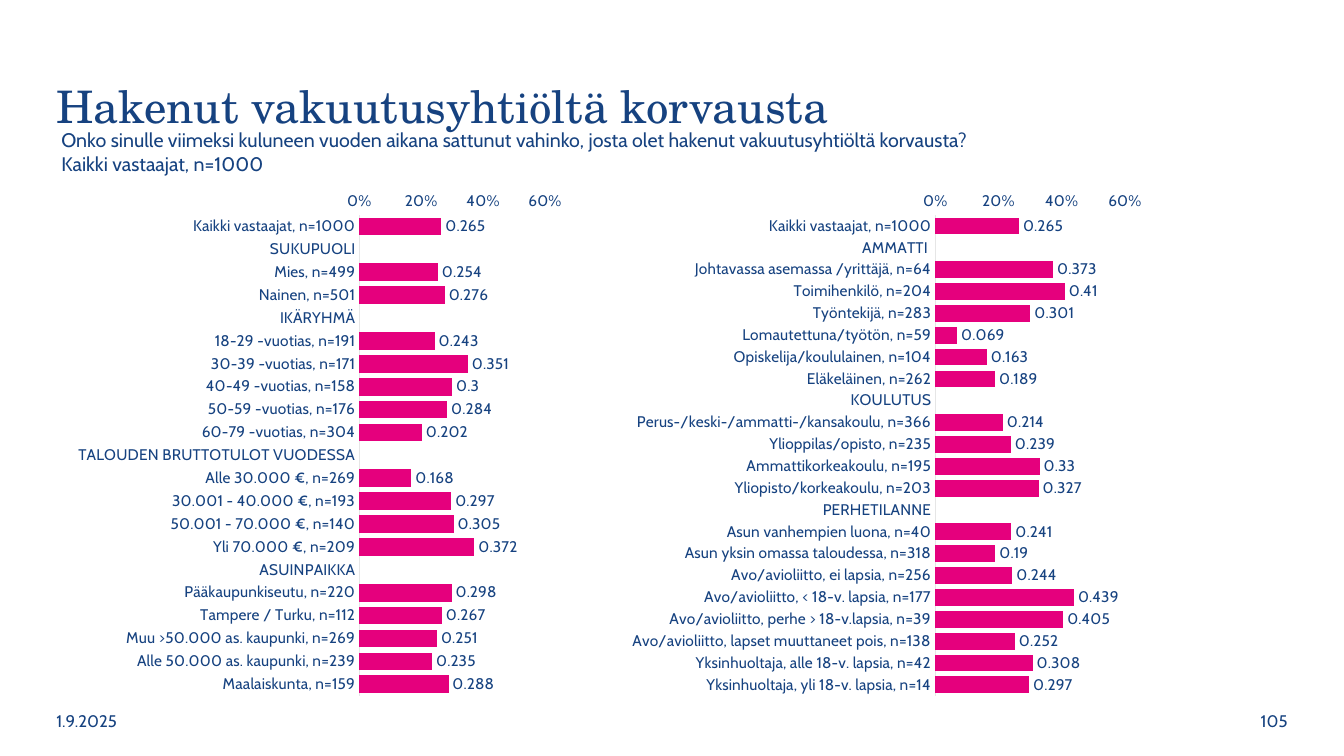
"""Builds a slide with two bar charts of insurance claims by group."""
from lxml import etree
from pptx import Presentation
from pptx.chart.data import CategoryChartData
from pptx.dml.color import RGBColor
from pptx.enum import chart as ch, text as tx
from pptx.oxml.ns import qn
from pptx.util import Inches, Pt

NAVY, PINK, GREY = "164280", "E5007D", "E6E6E6"
TITLE = "Hakenut vakuutusyhtiöltä korvausta"
INTRO = [
    "Onko sinulle viimeksi kuluneen vuoden aikana sattunut vahinko, "
    "josta olet hakenut vakuutusyhtiöltä korvausta?",
    "Kaikki vastaajat, n=1000",
]
LEFT = [
    ("Kaikki vastaajat, n=1000", 0.265),
    ("SUKUPUOLI", None),
    ("Mies, n=499", 0.254),
    ("Nainen, n=501", 0.276),
    ("IKÄRYHMÄ", None),
    ("18-29 -vuotias, n=191", 0.243),
    ("30-39 -vuotias, n=171", 0.351),
    ("40-49 -vuotias, n=158", 0.3),
    ("50-59 -vuotias, n=176", 0.284),
    ("60-79 -vuotias, n=304", 0.202),
    ("TALOUDEN BRUTTOTULOT VUODESSA", None),
    ("Alle 30.000 €, n=269", 0.168),
    ("30.001 - 40.000 €, n=193", 0.297),
    ("50.001 - 70.000 €, n=140", 0.305),
    ("Yli 70.000 €, n=209", 0.372),
    ("ASUINPAIKKA", None),
    ("Pääkaupunkiseutu, n=220", 0.298),
    ("Tampere / Turku, n=112", 0.267),
    ("Muu >50.000 as. kaupunki, n=269", 0.251),
    ("Alle 50.000 as. kaupunki, n=239", 0.235),
    ("Maalaiskunta, n=159", 0.288),
]
RIGHT = [
    ("Kaikki vastaajat, n=1000", 0.265),
    ("AMMATTI ", None),
    ("Johtavassa asemassa /yrittäjä, n=64", 0.373),
    ("Toimihenkilö, n=204", 0.41),
    ("Työntekijä, n=283", 0.301),
    ("Lomautettuna/työtön, n=59", 0.069),
    ("Opiskelija/koululainen, n=104", 0.163),
    ("Eläkeläinen, n=262", 0.189),
    ("KOULUTUS", None),
    ("Perus-/keski-/ammatti-/kansakoulu, n=366", 0.214),
    ("Ylioppilas/opisto, n=235", 0.239),
    ("Ammattikorkeakoulu, n=195", 0.33),
    ("Yliopisto/korkeakoulu, n=203", 0.327),
    ("PERHETILANNE", None),
    ("Asun vanhempien luona, n=40", 0.241),
    ("Asun yksin omassa taloudessa, n=318", 0.19),
    ("Avo/avioliitto, ei lapsia, n=256", 0.244),
    ("Avo/avioliitto, < 18-v. lapsia, n=177", 0.439),
    ("Avo/avioliitto, perhe > 18-v.lapsia, n=39", 0.405),
    ("Avo/avioliitto, lapset muuttaneet pois, n=138", 0.252),
    ("Yksinhuoltaja, alle 18-v. lapsia, n=42", 0.308),
    ("Yksinhuoltaja, yli 18-v. lapsia, n=14", 0.297),
]
CHARTS = [(0.69, 0.439, 0.281, LEFT), (6.14, 0.479, 0.287, RIGHT)]
MID, TOP = tx.MSO_ANCHOR.MIDDLE, tx.MSO_ANCHOR.TOP
START, END = tx.PP_ALIGN.LEFT, tx.PP_ALIGN.RIGHT
NOTES = [
    ((11.69, 6.95, 1.18, 0.4), ["105"], 12, MID, END),
    ((0.46, 6.95, 1.18, 0.4), ["1.9.2025"], 12, MID, START),
    ((0.51, 1.22, 12.13, 0.57), INTRO, 14, TOP, START),
]


def put(item, **vals):
    for key, val in vals.items():
        setattr(item, key, val)


def color(code):
    return RGBColor.from_string(code)


def style(font, size, name="Cabin"):
    put(font, size=Pt(size), name=name, bold=False)
    font.color.rgb = color(NAVY)


def write(shape, box, lines, size, anchor, align, name="Cabin", gap=1.0):
    for key, val in zip(("left", "top", "width", "height"), box):
        setattr(shape, key, Inches(val))
    frame = shape.text_frame
    put(frame, text="\n".join(lines), word_wrap=True,
        auto_size=tx.MSO_AUTO_SIZE.NONE, vertical_anchor=anchor)
    for para in frame.paragraphs:
        put(para, alignment=align, line_spacing=gap)
        style(para.runs[0].font, size, name)


def place(chart, x, w):
    plot = chart.element.find(".//" + qn("c:plotArea"))
    for old in plot.findall(qn("c:layout")):
        plot.remove(old)
    outer = etree.Element(qn("c:layout"))
    inner = etree.SubElement(outer, qn("c:manualLayout"))
    rules = dict(layoutTarget="inner", xMode="edge", yMode="edge",
                 x=x, y=0.062, w=w, h=0.861)
    for key, val in rules.items():
        etree.SubElement(inner, qn("c:" + key)).set("val", str(val))
    plot.insert(0, outer)


def draw(slide, left, x, w, rows):
    data = CategoryChartData()
    data.categories = [name for name, val in rows]
    data.add_series("Series 1", [val for name, val in rows])
    chart = slide.shapes.add_chart(
        ch.XL_CHART_TYPE.BAR_CLUSTERED, Inches(left), Inches(1.79),
        Inches(6.55), Inches(5.54), data).chart
    put(chart, has_legend=False, has_title=False)
    style(chart.font, 11)
    none = ch.XL_TICK_MARK.NONE
    cats, vals = chart.category_axis, chart.value_axis
    for axis in (cats, vals):
        put(axis, major_tick_mark=none, minor_tick_mark=none,
            has_major_gridlines=False)
    put(cats, reverse_order=True, crosses=ch.XL_AXIS_CROSSES.MAXIMUM)
    cats.format.line.color.rgb = color(GREY)
    cats.format.line.width = Pt(0.75)
    put(vals, minimum_scale=0, maximum_scale=0.6, major_unit=0.2)
    put(vals.tick_labels, number_format="0%", number_format_is_linked=False)
    vals.format.line.fill.background()
    plot = chart.plots[0]
    put(plot, gap_width=30, vary_by_categories=False, has_data_labels=True)
    put(plot.data_labels, show_value=True, number_format="General",
        number_format_is_linked=False,
        position=ch.XL_LABEL_POSITION.OUTSIDE_END)
    style(plot.data_labels.font, 11)
    fill = plot.series[0].format.fill
    fill.solid()
    fill.fore_color.rgb = color(PINK)
    place(chart, x, w)


def main():
    deck = Presentation()
    put(deck, slide_width=Inches(13.33), slide_height=Inches(7.5))
    slide = deck.slides.add_slide(deck.slide_layouts[5])
    write(slide.shapes.title, (0.46, 0.6, 12.13, 0.96), [TITLE], 32,
          MID, START, "TeX Gyre Schola", 0.9)
    for note in NOTES:
        write(slide.shapes.add_textbox(0, 0, 0, 0), *note)
    for item in CHARTS:
        draw(slide, *item)
    deck.save("out.pptx")


if __name__ == "__main__":
    main()
